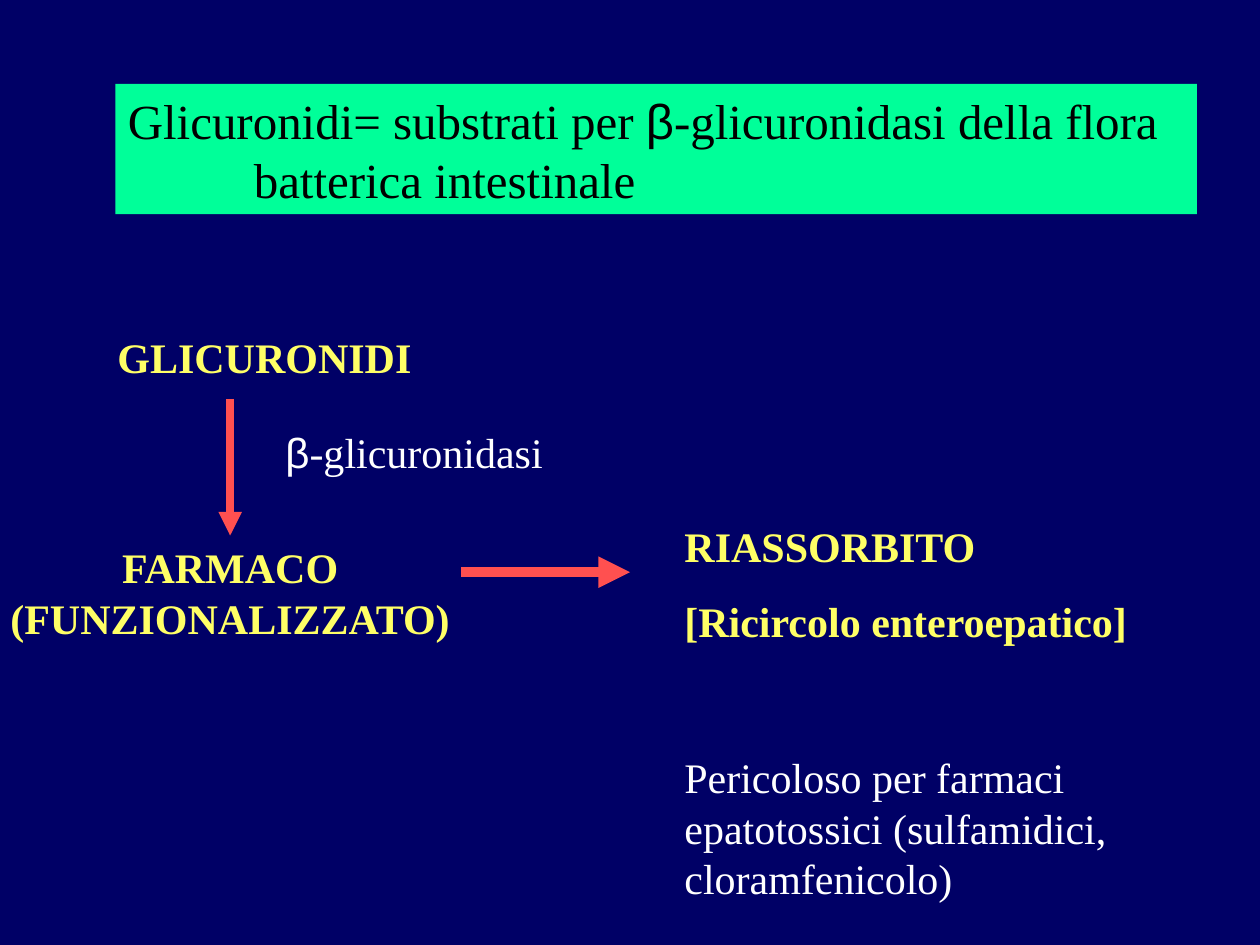
from pptx import Presentation
from pptx.dml.color import RGBColor
from pptx.enum.shapes import MSO_CONNECTOR, MSO_SHAPE
from pptx.enum.text import MSO_ANCHOR, MSO_AUTO_SIZE as AUTO, PP_ALIGN as ALIGN
from pptx.oxml.ns import qn
from pptx.util import Pt
from lxml.etree import SubElement

SERIF, SANS = "Times New Roman", "Arial"
NAVY, MINT, YELLOW, RED = "000066", "00FF99", "FFFF66", "FF5050"
WHITE, BLACK = "FFFFFF", "000000"


def rgb(value):
    return RGBColor.from_string(value)


class Board:
    """Draw text, a banner and arrows in one style on the current slide."""

    def __init__(self, deck):
        self.slide = deck.slides.add_slide(deck.slide_layouts[6])
        self.slide.background.fill.solid()
        self.slide.background.fill.fore_color.rgb = rgb(NAVY)

    def set_words(self, frame, paragraphs, color, size=24, bold=False, align=ALIGN.LEFT):
        layout = {"word_wrap": True, "auto_size": AUTO.SHAPE_TO_FIT_TEXT,
                  "vertical_anchor": MSO_ANCHOR.TOP}
        for name, value in layout.items():
            setattr(frame, name, value)
        for index, words in enumerate(paragraphs):
            paragraph = frame.add_paragraph() if index else frame.paragraphs[0]
            paragraph.alignment = align
            if index:
                paragraph.space_before = Pt(size * 0.57)
            before, beta, after = words.partition("β")
            for part, face in ((before, SERIF), (beta, SANS), (after, SERIF)):
                if part:
                    run = paragraph.add_run()
                    run.text = part
                    style = {"name": face, "size": Pt(size), "bold": bold}
                    for name, value in style.items():
                        setattr(run.font, name, value)
                    run.font.color.rgb = rgb(color)

    def text(self, box, *paragraphs, color=WHITE, **style):
        label = self.slide.shapes.add_textbox(*map(Pt, box))
        self.set_words(label.text_frame, paragraphs, color, **style)
        return label

    def banner(self, box, words, hanging):
        panel = self.slide.shapes.add_shape(MSO_SHAPE.RECTANGLE, *map(Pt, box))
        panel.shadow.inherit = False
        panel.fill.solid()
        panel.fill.fore_color.rgb = rgb(MINT)
        panel.line.fill.background()
        self.set_words(panel.text_frame, [words], BLACK, size=28)
        properties = panel.text_frame.paragraphs[0]._p.get_or_add_pPr()
        properties.set("marL", str(Pt(hanging)))
        properties.set("indent", str(-Pt(hanging)))

    def arrow(self, start, end, width, target=None):
        line = self.slide.shapes.add_connector(
            MSO_CONNECTOR.STRAIGHT, *map(Pt, (*start, *end)))
        line.line.color.rgb = rgb(RED)
        line.line.width = Pt(width)
        SubElement(line.line._get_or_add_ln(), qn("a:tailEnd"), type="triangle")
        SubElement(line._element.spPr, qn("a:effectLst"))
        if target is not None:
            line.end_connect(target, 0)


def main():
    deck = Presentation()
    deck.slide_width, deck.slide_height = Pt(720), Pt(540)
    board = Board(deck)
    heading = {"color": YELLOW, "bold": True}

    board.banner((66, 48, 618, 74.4),
                 "Glicuronidi= substrati per β-glicuronidasi della flora "
                 "batterica intestinale", hanging=72)
    board.text((60, 186, 204, 36), "GLICURONIDI", **heading)
    drug = board.text((-6, 306, 275, 65.4), "FARMACO (FUNZIONALIZZATO)",
                      align=ALIGN.CENTER, **heading)
    board.text((384, 294, 270, 79), "RIASSORBITO", "[Ricircolo enteroepatico]", **heading)
    board.text((384, 426, 264, 94),
               "Pericoloso per farmaci epatotossici (sulfamidici, cloramfenicolo)")
    board.arrow((131.5, 228), (131.5, 306), 4.5, target=drug)
    board.text((156, 240, 204, 36), "β-glicuronidasi")
    board.arrow((263.5, 327), (360, 327), 6)

    deck.save("out.pptx")


if __name__ == "__main__":
    main()
